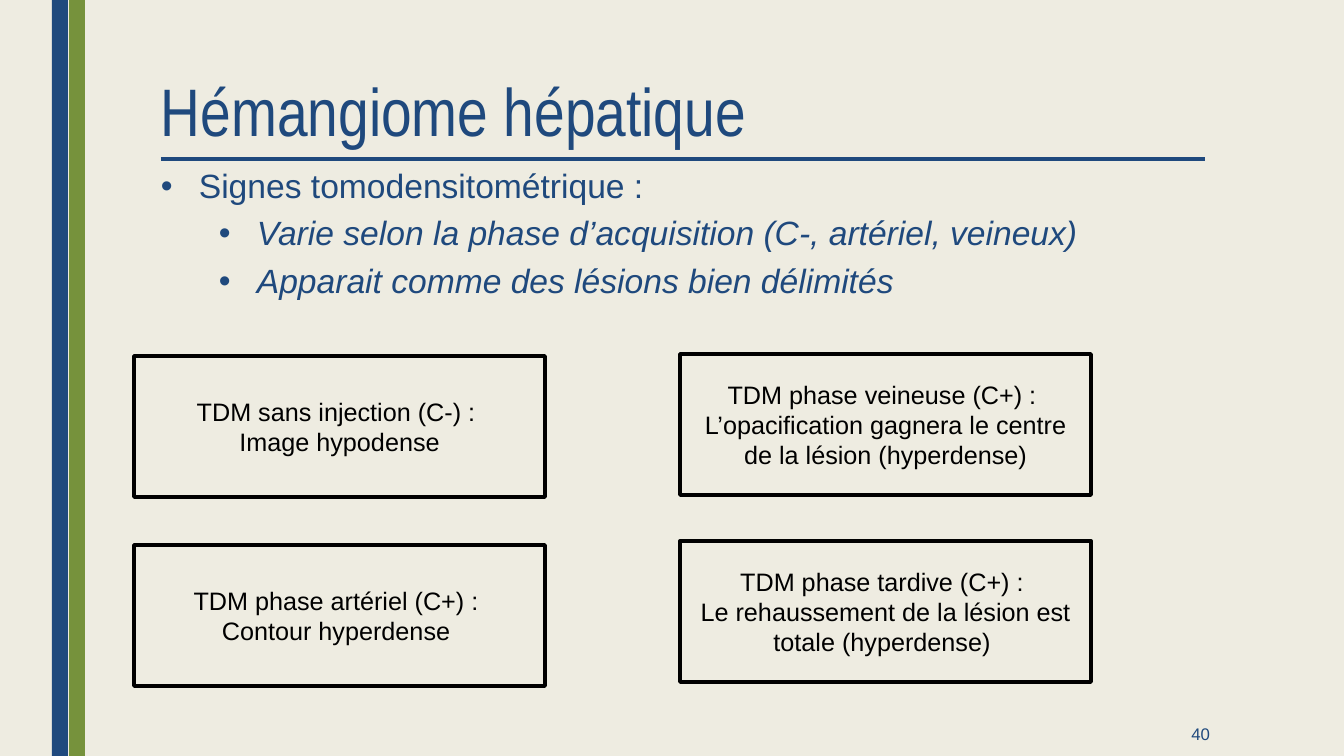
from lxml import etree
from pptx import Presentation
from pptx.dml.color import RGBColor
from pptx.enum.shapes import MSO_CONNECTOR, MSO_SHAPE
from pptx.enum.text import MSO_ANCHOR, PP_ALIGN
from pptx.oxml.ns import qn
from pptx.util import Emu, Pt

RECTANGLE = MSO_SHAPE.RECTANGLE
STRAIGHT = MSO_CONNECTOR.STRAIGHT
TOP, MIDDLE, BOTTOM = MSO_ANCHOR.TOP, MSO_ANCHOR.MIDDLE, MSO_ANCHOR.BOTTOM
LEFT, CENTER, RIGHT = PP_ALIGN.LEFT, PP_ALIGN.CENTER, PP_ALIGN.RIGHT

COLORS = {
    name: RGBColor.from_string(value)
    for name, value in {
        "background": "EEECE1",
        "blue": "1F497D",
        "green": "76923C",
        "black": "000000",
    }.items()
}


def px(length):
    return Emu(round(length * 914400 / 100.8))


def write(shape, lines, size, color, align=LEFT, anchor=TOP, font="Arial"):
    """Fill a shape with one paragraph per line, all in the same style."""
    frame = shape.text_frame
    frame.word_wrap = True
    frame.vertical_anchor = anchor
    frame.text = "\n".join(lines)
    for para in frame.paragraphs:
        para.alignment = align
        for span in para.runs:
            span.font.name = font
            span.font.size = Pt(size)
            span.font.color.rgb = COLORS[color]
    return frame


deck = Presentation()
deck.slide_width, deck.slide_height = px(1344), px(756)
page = deck.slides.add_slide(deck.slide_layouts[6])
page.background.fill.solid()
page.background.fill.fore_color.rgb = COLORS["background"]
shapes = page.shapes

# Side bars
for left, color in ((69, "green"), (52, "blue")):
    bar = shapes.add_shape(RECTANGLE, px(left), 0, px(16), px(756))
    bar.shadow.inherit = False
    bar.fill.solid()
    bar.fill.fore_color.rgb = COLORS[color]
    bar.line.fill.background()

# Title and its rule
rule = shapes.add_connector(STRAIGHT, px(161), px(159), px(1205), px(159))
rule.line.color.rgb = COLORS["blue"]
rule.line.width = Pt(2.25)
etree.SubElement(rule.line._get_or_add_ln().getparent(), qn("a:effectLst"))

title = shapes.add_textbox(px(151), px(76), px(1058), px(80))
title_frame = write(title, ["Hémangiome hépatique"], 48, "blue",
                    anchor=BOTTOM, font="Arial Narrow")
title_frame.paragraphs[0].line_spacing = 0.89

# Bulleted signs
SIGNS = [
    (0, "Signes tomodensitométrique :"),
    (1, "Varie selon la phase d’acquisition (C-, artériel, veineux)"),
    (1, "Apparait comme des lésions bien délimités"),
]
body = shapes.add_textbox(px(151), px(163), px(1058), px(181))
body_frame = write(body, [text for level, text in SIGNS], 24, "blue")
for para, (level, text) in zip(body_frame.paragraphs, SIGNS):
    para.level = level
    para.line_spacing = 0.94
    para.space_before = Pt(5 if level else 10)
    para.space_after = Pt(2)
    para.runs[0].font.italic = level == 1
    properties = para._p.get_or_add_pPr()
    properties.set("marL", str(px(96 if level else 38)))
    properties.set("indent", str(px(-38)))
    etree.SubElement(properties, qn("a:buFont"), typeface="Arial")
    etree.SubElement(properties, qn("a:buChar"), char="•")

# Scan phases
PHASES = [
    (134, 356, "TDM sans injection (C-) : ", "Image hypodense"),
    (134, 545, "TDM phase artériel (C+) : ", "Contour hyperdense "),
    (680, 354, "TDM phase veineuse (C+) : ",
     "L’opacification gagnera le centre de la lésion (hyperdense)"),
    (680, 541, "TDM phase tardive (C+) : ",
     "Le rehaussement de la lésion est totale (hyperdense) "),
]
for left, top, phase, finding in PHASES:
    box = shapes.add_shape(RECTANGLE, px(left), px(top), px(411), px(141))
    box.shadow.inherit = False
    box.fill.background()
    box.line.color.rgb = COLORS["black"]
    box.line.width = Pt(2.75)
    write(box, [phase, finding], 18, "black", CENTER, MIDDLE)

page_number = shapes.add_textbox(px(1044), px(712), px(176), px(44))
write(page_number, ["40"], 12, "blue", RIGHT, MIDDLE)

deck.save("out.pptx")
